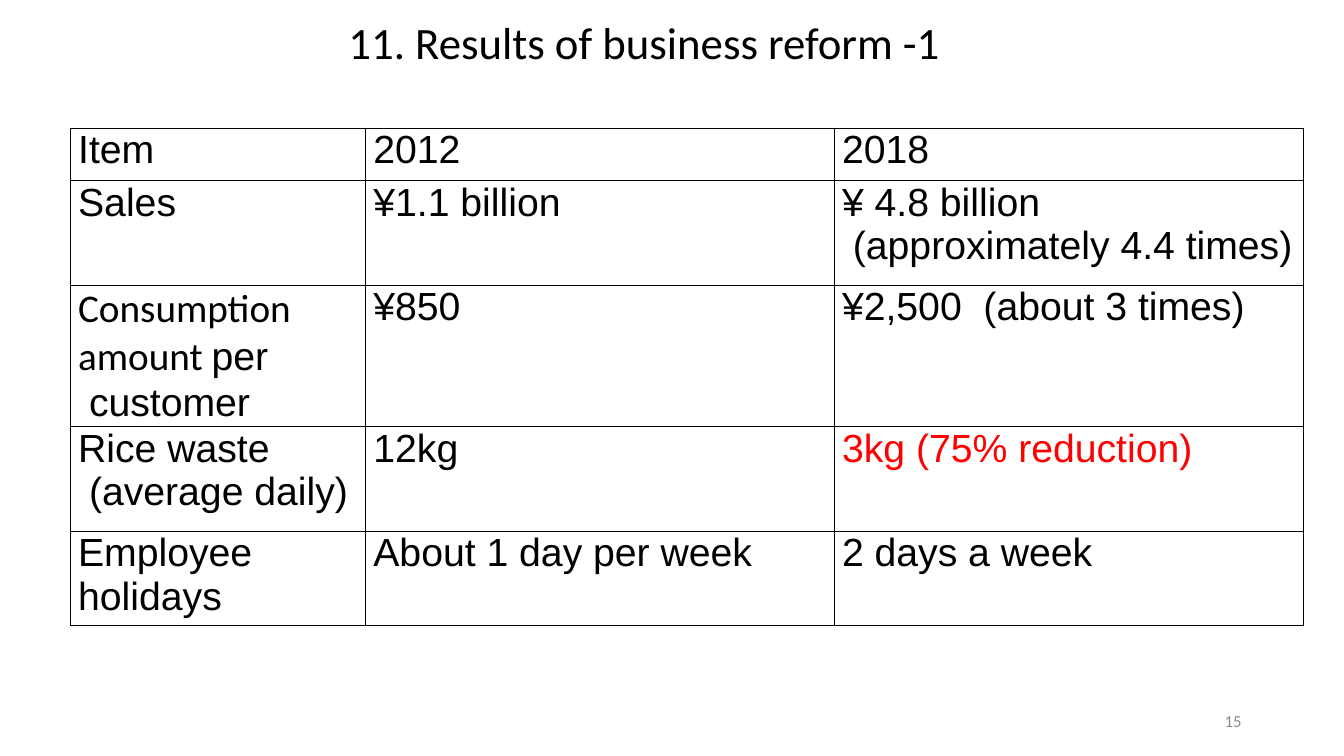
from lxml.etree import SubElement
from pptx import Presentation
from pptx.dml.color import RGBColor
from pptx.enum.text import MSO_ANCHOR, PP_ALIGN
from pptx.oxml.ns import qn
from pptx.util import Cm, Pt

BLACK = RGBColor(0x00, 0x00, 0x00)
RED = RGBColor(0xFF, 0x00, 0x00)
GRAY = RGBColor(0x8C, 0x8C, 0x8C)

COLUMN_WIDTHS = [7.44, 11.81, 11.81]
ROW_HEIGHTS = [1.32, 2.64, 3.51, 2.64, 2.2]
ROWS = [
    ["Item", "2012", "2018"],
    ["Sales", "¥1.1 billion", "¥ 4.8 billion\n (approximately 4.4 times)"],
    ["Consumption\vamount \n customer", "¥850", "¥2,500  (about 3 times)"],
    ["Rice waste\n (average daily)", "12kg", "3kg (75% reduction)"],
    ["Employee holidays", "About 1 day per week", "2 days a week"],
]


def format_run(run, font_name, size, color):
    run.font.name = font_name
    run.font.size = Pt(size)
    run.font.color.rgb = color


def add_label(slide, text, box, size, color, alignment, anchor):
    shape = slide.shapes.add_textbox(*[Cm(length) for length in box])
    text_frame = shape.text_frame
    text_frame.word_wrap = True
    text_frame.vertical_anchor = anchor
    text_frame.text = text
    paragraph = text_frame.paragraphs[0]
    paragraph.alignment = alignment
    format_run(paragraph.runs[0], "Calibri", size, color)
    return paragraph


presentation = Presentation()
presentation.slide_width = Cm(33.87)
presentation.slide_height = Cm(19.05)
slide = presentation.slides.add_slide(presentation.slide_layouts[6])

title = add_label(slide, "11. Results of business reform -1", (0.9, 0.25, 30.68, 1.63),
                  32, BLACK, PP_ALIGN.CENTER, MSO_ANCHOR.BOTTOM)
title.line_spacing = 0.9

table = slide.shapes.add_table(
    len(ROWS), len(COLUMN_WIDTHS), Cm(1.78), Cm(3.23),
    Cm(sum(COLUMN_WIDTHS)), Cm(sum(ROW_HEIGHTS))).table
table.first_row = False
table.horz_banding = False
for column, width in zip(table.columns, COLUMN_WIDTHS):
    column.width = Cm(width)
for row, height in zip(table.rows, ROW_HEIGHTS):
    row.height = Cm(height)

for row, texts in zip(table.rows, ROWS):
    for cell, text in zip(row.cells, texts):
        cell.margin_left = cell.margin_right = Cm(0.19)
        cell.margin_top = cell.margin_bottom = 0
        cell.text_frame.text = text
        for paragraph in cell.text_frame.paragraphs:
            paragraph.alignment = PP_ALIGN.JUSTIFY
            for run in paragraph.runs:
                format_run(run, "Arial", 28, BLACK)
        properties = cell._tc.get_or_add_tcPr()
        for side in ("a:lnL", "a:lnR", "a:lnT", "a:lnB"):
            border = SubElement(properties, qn(side), w=str(Pt(1)))
            fill = SubElement(border, qn("a:solidFill"))
            SubElement(fill, qn("a:srgbClr"), val=str(BLACK))
        cell.fill.background()

consumption = table.cell(2, 0).text_frame.paragraphs[0]
consumption.alignment = PP_ALIGN.LEFT
for run in consumption.runs:
    run.font.name = "Calibri"
per_run = consumption.add_run()
per_run.text = "per"
format_run(per_run, "Arial", 28, BLACK)

rice_reduction = table.cell(3, 2).text_frame.paragraphs[0]
rice_reduction.runs[0].font.color.rgb = RED

add_label(slide, "15", (23.92, 17.66, 7.62, 1.01),
          12, GRAY, PP_ALIGN.RIGHT, MSO_ANCHOR.MIDDLE)

presentation.save("out.pptx")
